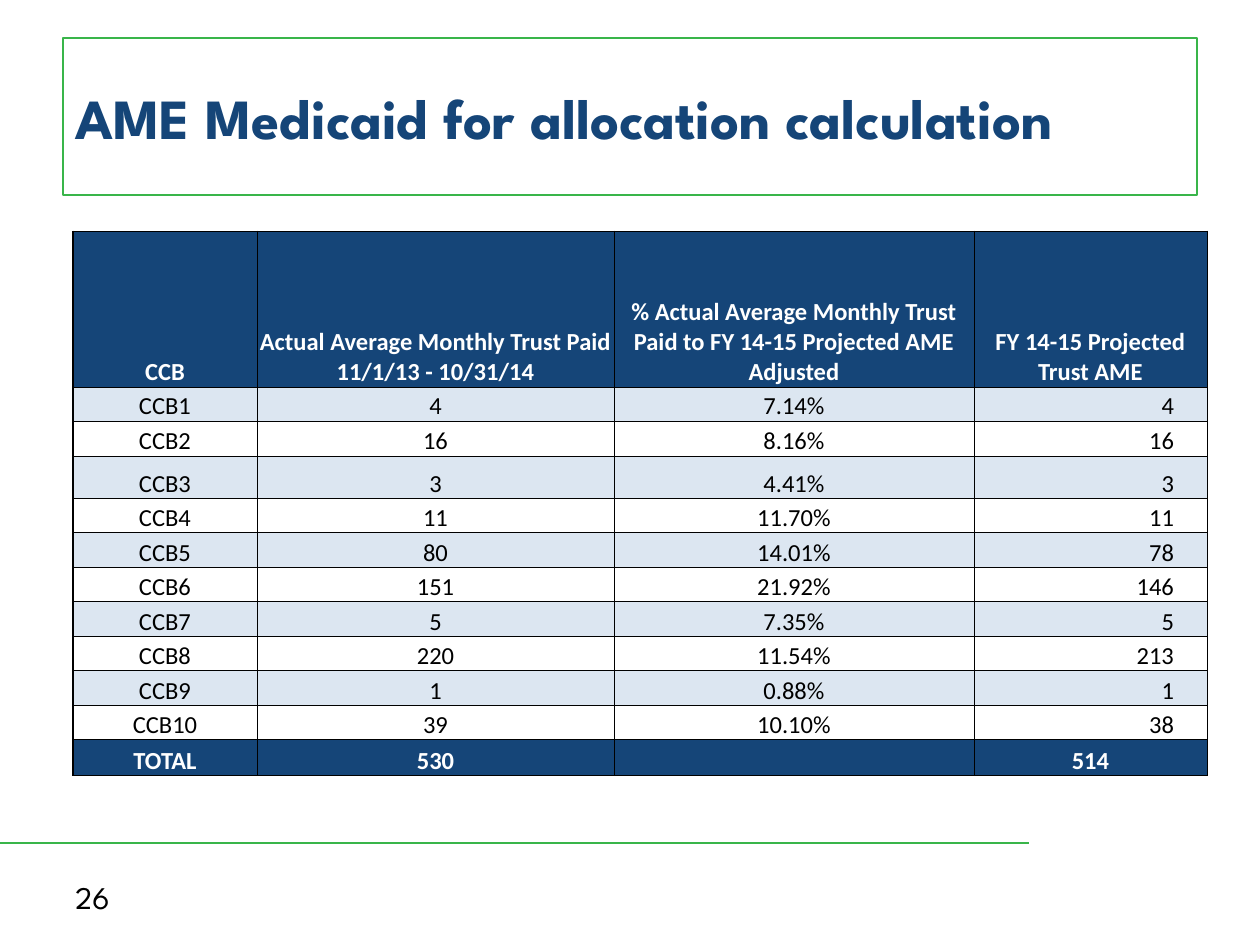
from dataclasses import dataclass

from lxml import etree
from pptx import Presentation
from pptx.dml.color import RGBColor
from pptx.enum.shapes import MSO_CONNECTOR, MSO_SHAPE
from pptx.enum.text import MSO_ANCHOR, PP_ALIGN
from pptx.oxml.ns import qn
from pptx.util import Emu, Pt

EMU_PER_PX = 914400 / 126
LEFT, CENTER, RIGHT = PP_ALIGN.LEFT, PP_ALIGN.CENTER, PP_ALIGN.RIGHT
MIDDLE, BOTTOM = MSO_ANCHOR.MIDDLE, MSO_ANCHOR.BOTTOM
RECTANGLE, STRAIGHT = MSO_SHAPE.RECTANGLE, MSO_CONNECTOR.STRAIGHT

NAVY, GREEN, PALE_BLUE = "154578", "39B54A", "DCE6F1"
WHITE, BLACK = "FFFFFF", "000000"
HEADING_FONT, TABLE_FONT = "League Spartan", "Calibri"
TABLE_SIZE = 14
NUMBER_INSET = 33  # right margin of the last column's figures

COLUMN_EDGES = (73, 257, 614, 974, 1207)
ROW_EDGES = (231, 387, 421, 456, 499, 533, 568, 602, 637, 671, 706, 740, 776)
ROWS = (
    ("CCB", "Actual Average Monthly Trust Paid 11/1/13 - 10/31/14",
     "% Actual Average Monthly Trust Paid to FY 14-15 Projected AME Adjusted",
     "FY 14-15 Projected Trust AME"),
    ("CCB1", "4", "7.14%", "4"),
    ("CCB2", "16", "8.16%", "16"),
    ("CCB3", "3", "4.41%", "3"),
    ("CCB4", "11", "11.70%", "11"),
    ("CCB5", "80", "14.01%", "78"),
    ("CCB6", "151", "21.92%", "146"),
    ("CCB7", "5", "7.35%", "5"),
    ("CCB8", "220", "11.54%", "213"),
    ("CCB9", "1", "0.88%", "1"),
    ("CCB10", "39", "10.10%", "38"),
    ("TOTAL", "530", "", "514"),
)


@dataclass(frozen=True)
class TextStyle:
    size: float
    font: str
    color: str
    bold: bool = False
    align: PP_ALIGN = LEFT


def px(length: int) -> Emu:
    return Emu(round(length * EMU_PER_PX))


def rgb(color: str) -> RGBColor:
    return RGBColor.from_string(color)


def write(text_frame, text: str, style: TextStyle) -> None:
    text_frame.word_wrap = True
    text_frame.text = text
    paragraph = text_frame.paragraphs[0]
    paragraph.alignment = style.align
    for run in paragraph.runs:
        run.font.size = Pt(style.size)
        run.font.name = style.font
        run.font.bold = style.bold
        run.font.color.rgb = rgb(style.color)


def add_title(slide) -> None:
    shape = slide.shapes.add_shape(RECTANGLE, px(63), px(38), px(1134), px(157))
    shape.shadow.inherit = False
    shape.fill.background()
    shape.line.color.rgb = rgb(GREEN)
    shape.line.width = Pt(1)
    shape.text_frame.vertical_anchor = MIDDLE
    write(shape.text_frame, "AME Medicaid for allocation calculation",
          TextStyle(32.4, HEADING_FONT, NAVY, bold=True))


def add_footer(slide) -> None:
    rule = slide.shapes.add_connector(STRAIGHT, px(0), px(843), px(1029), px(843))
    rule.line.color.rgb = rgb(GREEN)
    rule.line.width = Pt(1.5)
    etree.SubElement(rule._element.spPr, qn("a:effectLst"))
    number = slide.shapes.add_textbox(px(63), px(872), px(294), px(50))
    number.text_frame.vertical_anchor = MIDDLE
    write(number.text_frame, "26", TextStyle(18, HEADING_FONT, BLACK))


def set_border(cell, side: str, width: float) -> None:
    """Draw one black border; side is L, R, T or B. Call before filling the cell."""
    properties = cell._tc.get_or_add_tcPr()
    line = etree.SubElement(properties, qn(f"a:ln{side}"), w=str(Pt(width)))
    fill = etree.SubElement(line, qn("a:solidFill"))
    etree.SubElement(fill, qn("a:srgbClr"), val=BLACK)


def format_cell(cell, row: int, column: int) -> None:
    last_row = len(ROWS) - 1
    emphasized = row in (0, last_row)
    is_figure = column == len(ROWS[0]) - 1 and not emphasized

    cell.vertical_anchor = BOTTOM
    cell.margin_left = cell.margin_top = px(1)
    cell.margin_right = px(NUMBER_INSET if is_figure else 1)
    cell.margin_bottom = 0
    write(cell.text_frame, ROWS[row][column],
          TextStyle(TABLE_SIZE, TABLE_FONT, WHITE if emphasized else BLACK,
                    emphasized, RIGHT if is_figure else CENTER))
    if not ROWS[row][column]:
        # An empty cell would otherwise take the height of 18 pt text.
        end = cell.text_frame.paragraphs[0]._p.get_or_add_endParaRPr()
        end.set("sz", str(TABLE_SIZE * 100))

    set_border(cell, "L", 1 if column == 0 else 0.5)
    set_border(cell, "R", 0.5)
    set_border(cell, "T", 0.5)
    set_border(cell, "B", 1 if row == last_row else 0.5)
    if emphasized or row % 2:
        cell.fill.solid()
        cell.fill.fore_color.rgb = rgb(NAVY if emphasized else PALE_BLUE)
    else:
        cell.fill.background()


def add_allocation_table(slide) -> None:
    left, top = COLUMN_EDGES[0], ROW_EDGES[0]
    table = slide.shapes.add_table(
        len(ROWS), len(ROWS[0]), px(left), px(top),
        px(COLUMN_EDGES[-1] - left), px(ROW_EDGES[-1] - top)).table
    table.first_row = table.horz_banding = False
    for column, start, end in zip(table.columns, COLUMN_EDGES, COLUMN_EDGES[1:]):
        column.width = px(end - start)
    for row, start, end in zip(table.rows, ROW_EDGES, ROW_EDGES[1:]):
        row.height = px(end - start)
    for row in range(len(ROWS)):
        for column in range(len(ROWS[0])):
            format_cell(table.cell(row, column), row, column)


def main() -> None:
    presentation = Presentation()
    presentation.slide_width, presentation.slide_height = px(1260), px(945)
    slide = presentation.slides.add_slide(presentation.slide_layouts[6])
    add_footer(slide)
    add_title(slide)
    add_allocation_table(slide)
    presentation.save("out.pptx")


if __name__ == "__main__":
    main()
